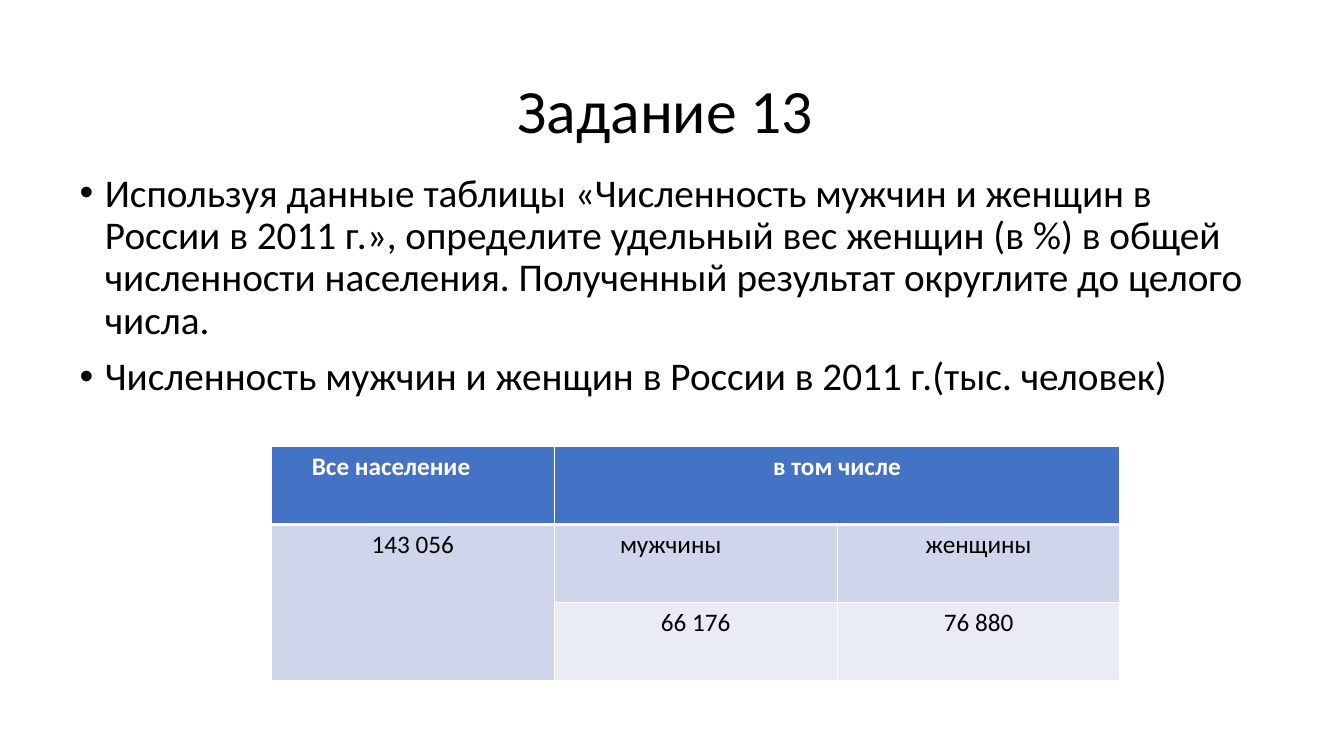
from lxml import etree
from pptx import Presentation
from pptx.dml.color import RGBColor
from pptx.enum import text
from pptx.oxml import ns
from pptx.util import Inches, Pt

COLORS = {
    "ink": "000000",
    "white": "FFFFFF",
    "header": "4472C4",
    "band_dark": "CFD5EA",
    "band_light": "E9EBF5",
}
TASK = [
    "Используя данные таблицы «Численность мужчин и женщин в России в 2011 г.», "
    "определите удельный вес женщин (в %) в общей численности населения. "
    "Полученный результат округлите до целого числа.",
    "Численность мужчин и женщин в России в 2011 г.(тыс. человек)",
]
POPULATION = [
    ["Все население\t", "в том числе", ""],
    ["143 056", "мужчины\t", "женщины"],
    ["", "66 176", "76 880"],
]
ROW_FILLS = ["header", "band_dark", "band_light"]


def write(paragraph, words, size=18, color="ink", bold=False,
          align=text.PP_ALIGN.CENTER, spacing=None, before=None):
    run = paragraph.add_run()
    run.text = words
    run.font.name = "Calibri"
    run.font.size = Pt(size)
    run.font.bold = bold
    run.font.color.rgb = RGBColor.from_string(COLORS[color])
    paragraph.alignment = align
    if spacing is not None:
        paragraph.line_spacing = spacing
    if before is not None:
        paragraph.space_before = Pt(before)


def place(placeholder, left, top, width, height, anchor):
    placeholder.left, placeholder.top = Inches(left), Inches(top)
    placeholder.width, placeholder.height = Inches(width), Inches(height)
    frame = placeholder.text_frame
    frame.word_wrap = True
    frame.auto_size = text.MSO_AUTO_SIZE.NONE
    frame.vertical_anchor = anchor
    return frame


def add_bullet(paragraph):
    props = paragraph._p.get_or_add_pPr()
    props.set("marL", str(Inches(0.25)))
    props.set("indent", str(Inches(-0.25)))
    etree.SubElement(props, ns.qn("a:buFont"), typeface="Arial")
    etree.SubElement(props, ns.qn("a:buChar"), char="•")


def add_borders(cell, widths):
    props = cell._tc.get_or_add_tcPr()
    for side, width in widths.items():
        line = etree.SubElement(props, ns.qn(f"a:ln{side}"), w=str(Pt(width)))
        fill = etree.SubElement(line, ns.qn("a:solidFill"))
        etree.SubElement(fill, ns.qn("a:srgbClr"), val=COLORS["white"])


def add_population_table(slide):
    frame = slide.shapes.add_table(3, 3, Inches(2.69), Inches(4.43),
                                   Inches(8.42), Inches(2.32))
    table = frame.table
    for r, row in enumerate(POPULATION):
        header = r == 0
        for c, words in enumerate(row):
            cell = table.cell(r, c)
            add_borders(cell, {"L": 1, "R": 1, "T": 3 if r == 1 else 1,
                               "B": 3 if header else 1})
            cell.fill.solid()
            cell.fill.fore_color.rgb = RGBColor.from_string(COLORS[ROW_FILLS[r]])
            if words:
                write(cell.text_frame.paragraphs[0], words, bold=header,
                      color="white" if header else "ink")
    table.cell(0, 1).merge(table.cell(0, 2))
    table.cell(1, 0).merge(table.cell(2, 0))


def main():
    prs = Presentation()
    prs.slide_width, prs.slide_height = Inches(13.33), Inches(7.5)
    slide = prs.slides.add_slide(prs.slide_layouts[1])

    # Heading
    heading = place(slide.shapes.title, 0.92, 0.4, 11.5, 1.45,
                    text.MSO_ANCHOR.MIDDLE)
    write(heading.paragraphs[0], "Задание 13 ", size=44, spacing=0.9)

    # Task wording
    task = place(slide.placeholders[1], 0.69, 1.67, 11.73, 5.08,
                 text.MSO_ANCHOR.TOP)
    for i, words in enumerate(TASK):
        paragraph = task.add_paragraph() if i else task.paragraphs[0]
        write(paragraph, words, size=28, align=text.PP_ALIGN.LEFT,
              spacing=0.9, before=10)
        add_bullet(paragraph)

    # Population figures
    add_population_table(slide)
    prs.save("out.pptx")


if __name__ == "__main__":
    main()
